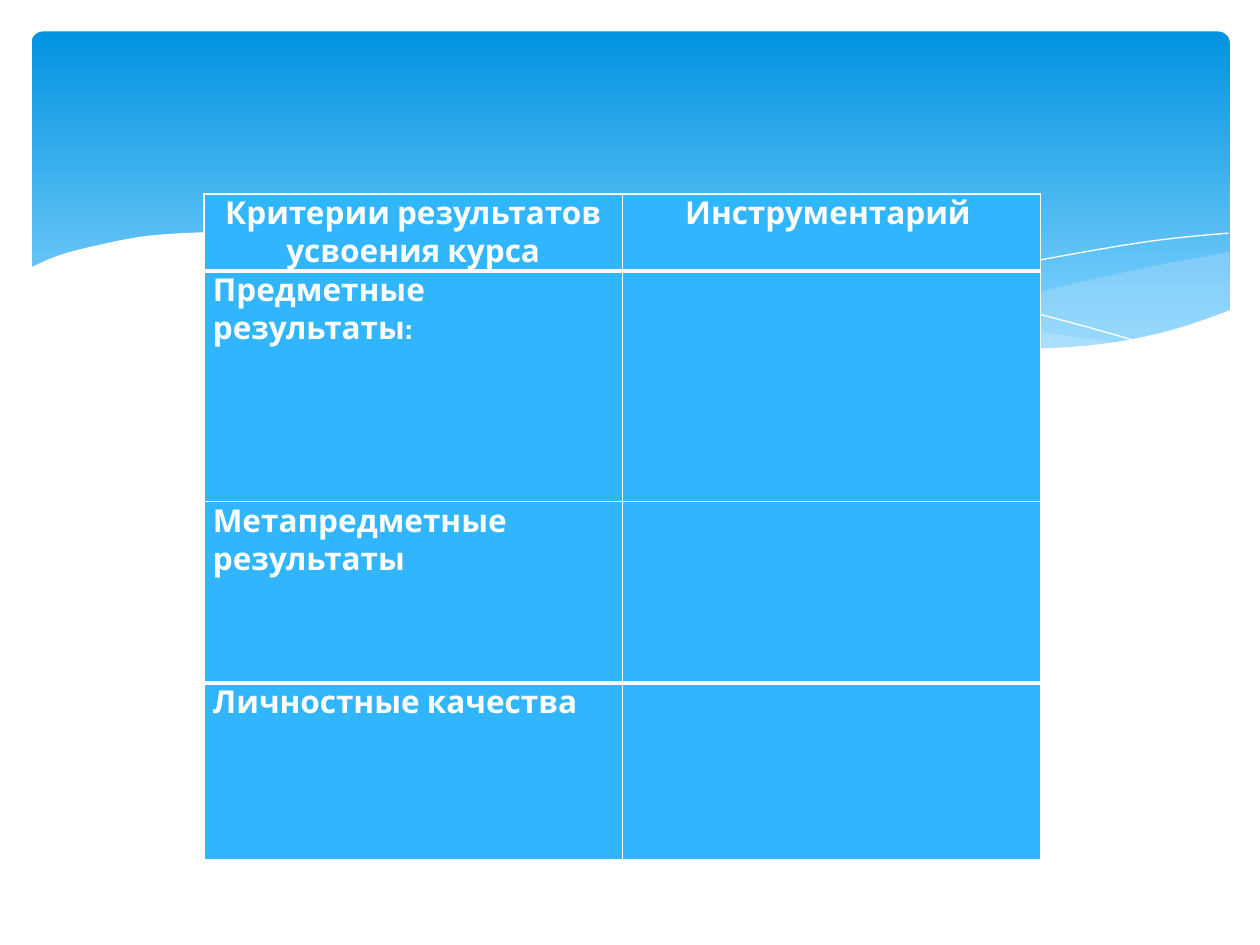
"""Build a slide with a results-and-tools table over a blue wave banner."""
from lxml.etree import SubElement
from pptx import Presentation
from pptx.dml.color import RGBColor
from pptx.enum.shapes import MSO_SHAPE as SHAPE
from pptx.enum.text import PP_ALIGN as ALIGN
from pptx.oxml.ns import qn
from pptx.util import Inches, Pt

COLORS = {"white": "FFFFFF", "cell": "31B6FD", "mist": "C6E7FC",
          "banner_top": "0293E0", "banner_bottom": "83D3FE"}
RGB = {name: RGBColor.from_string(value) for name, value in COLORS.items()}
FONT = "Cabin"
FONT_SIZE = Pt(18)
STEPS_PER_KNOT = 5


def smooth(knots):
    """Return points on a Catmull-Rom curve that passes through the knots."""
    padded = [knots[0], *knots, knots[-1]]
    points = [knots[0]]
    for before, start, end, after in zip(padded, padded[1:], padded[2:], padded[3:]):
        for step in range(1, STEPS_PER_KNOT + 1):
            t = step / STEPS_PER_KNOT
            points.append(tuple(
                b + ((c - a) * t + (2 * a - 5 * b + 4 * c - d) * t ** 2
                     + (3 * b - a - 3 * c + d) * t ** 3) / 2
                for a, b, c, d in zip(before, start, end, after)))
    return points


def add_curve(page, arcs, closed):
    """Draw one freeform through smooth arcs joined by straight edges."""
    points = [(Inches(x), Inches(y)) for arc in arcs for x, y in smooth(arc)]
    builder = page.shapes.build_freeform(*points[0])
    builder.add_line_segments(points[1:], close=closed)
    curve = builder.convert_to_shape()
    curve.shadow.inherit = False
    return curve


deck = Presentation()
deck.slide_width, deck.slide_height = Inches(10), Inches(7.5)
page = deck.slides.add_slide(deck.slide_layouts[6])

banner = page.shapes.add_shape(
    SHAPE.ROUNDED_RECTANGLE, Inches(0.25), Inches(0.25), Inches(9.51), Inches(2.7))
banner.adjustments[0] = 0.034
banner.shadow.inherit = False
banner.line.fill.background()
banner.fill.gradient()
banner.fill.gradient_angle = 270
banner_stops = [(0, "banner_top"), (0.9, "banner_bottom")]
for stop, (position, color) in zip(banner.fill.gradient_stops, banner_stops):
    stop.position = position
    stop.color.rgb = RGB[color]

right_swell = [
    [(9.76, 2), (9.21, 2.1), (8.61, 2.23), (7.79, 2.42), (7.06, 2.57), (6.61, 2.65)],
    [(6.61, 2.65), (7.19, 2.72), (7.69, 2.77), (8.14, 2.78), (8.54, 2.76),
     (8.97, 2.7), (9.35, 2.62), (9.76, 2.47)]]
middle_swell = [
    [(8.93, 2.73), (8.07, 2.6), (7.06, 2.4), (6.29, 2.22), (5.69, 2.08),
     (5.14, 1.98), (4.42, 1.89), (3.61, 1.85), (2.86, 1.91)],
    [(2.86, 1.91), (3.62, 2.03), (4.49, 2.22), (5.3, 2.4), (6.01, 2.55),
     (6.65, 2.66), (7.22, 2.74), (7.73, 2.77), (8.28, 2.78), (8.93, 2.73)]]
white_wave = [
    [(9.77, 2.46), (9.3, 2.62), (8.75, 2.73), (8.09, 2.77), (7.44, 2.74),
     (6.68, 2.65), (5.79, 2.5), (5.03, 2.33), (4.47, 2.2), (3.65, 2.02),
     (2.92, 1.9), (2.3, 1.85), (1.77, 1.84), (1.19, 1.87), (0.76, 1.95),
     (0.46, 2.03), (0.23, 2.13)],
    [(0.23, 3.29), (9.77, 3.29)]]
falling_line = [
    [(3.09, 1.95), (3.53, 1.89), (4.16, 1.87), (4.89, 1.9), (5.56, 1.97),
     (6.36, 2.08), (7.27, 2.26), (8.31, 2.51), (9.07, 2.72)]]
rising_line = [
    [(6.13, 2.57), (6.95, 2.35), (7.76, 2.16), (8.66, 1.99), (9.24, 1.9), (9.75, 1.85)]]

for arcs, opacity_percent in [(right_swell, 29), (middle_swell, 40)]:
    swell = add_curve(page, arcs, closed=True)
    swell.line.fill.background()
    swell.fill.solid()
    swell.fill.fore_color.rgb = RGB["mist"]
    tint = swell.element.spPr.find(qn("a:solidFill"))[0]
    SubElement(tint, qn("a:alpha"), val=str(opacity_percent * 1000))

for arcs in (falling_line, rising_line):
    thread = add_curve(page, arcs, closed=False)
    thread.fill.background()
    thread.line.color.rgb = RGB["white"]
    thread.line.width = Pt(0)

wave = add_curve(page, white_wave, closed=True)
wave.line.fill.background()
wave.fill.solid()
wave.fill.fore_color.rgb = RGB["white"]

table_rows = [
    (0.61, ("Критерии результатов усвоения курса", "Инструментарий ")),
    (1.83, ("Предметные результаты:", "")),
    (1.44, ("Метапредметные результаты", "")),
    (1.4, ("Личностные качества", ""))]
rule_widths = [1, 3, 1, 3, 1]
table_height = sum(height for height, labels in table_rows)

table = page.shapes.add_table(
    len(table_rows), 2, Inches(1.62), Inches(1.54), Inches(6.64), Inches(table_height)).table
for row_index, (height, labels) in enumerate(table_rows):
    table.rows[row_index].height = Inches(height)
    rule_above, rule_below = rule_widths[row_index:row_index + 2]
    borders = {"a:lnL": 1, "a:lnR": 1, "a:lnT": rule_above, "a:lnB": rule_below}
    for column_index, label in enumerate(labels):
        cell = table.cell(row_index, column_index)
        cell.margin_left = cell.margin_right = Inches(0.07)
        cell.margin_top = cell.margin_bottom = 0

        cell_props = cell._tc.get_or_add_tcPr()
        for tag, width in borders.items():
            border = SubElement(cell_props, qn(tag), w=str(Pt(width)))
            paint = SubElement(border, qn("a:solidFill"))
            SubElement(paint, qn("a:srgbClr"), val=COLORS["white"])
        cell.fill.solid()
        cell.fill.fore_color.rgb = RGB["cell"]

        cell.text_frame.text = label
        para = cell.text_frame.paragraphs[0]
        para.alignment = ALIGN.CENTER if row_index == 0 else ALIGN.LEFT
        for span in para.runs:
            span.font.name = FONT
            span.font.size = FONT_SIZE
            span.font.bold = True
            span.font.color.rgb = RGB["white"]

deck.save("out.pptx")
